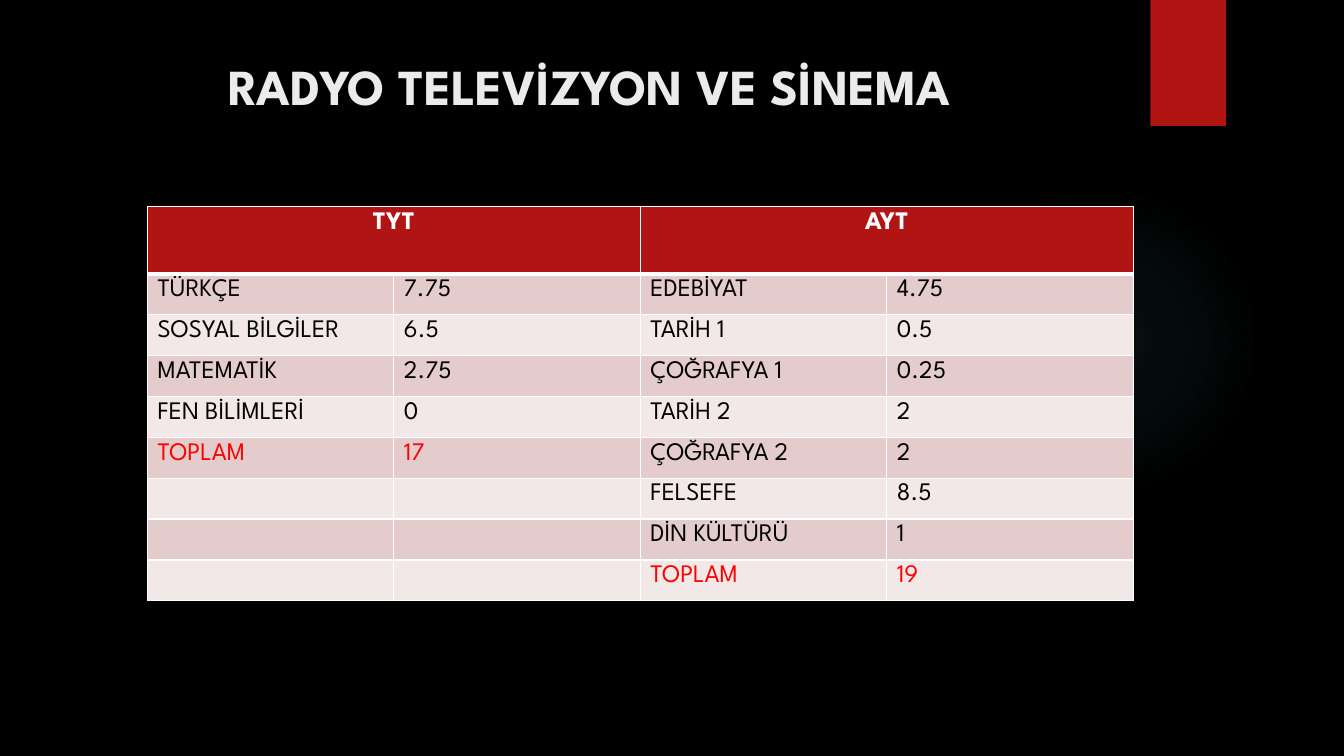
from lxml import etree
from pptx import Presentation
from pptx.dml.color import RGBColor
from pptx.enum import shapes, text
from pptx.oxml import ns, parse_xml
from pptx.util import Pt

FONT = "League Spartan"
COLORS = {
    "background": "000000", "accent": "B01513", "glow": "50B9C1",
    "title": "EBEBEB", "header": "FFFFFF", "border": "FFFFFF",
    "body": "000000", "total": "FF0000",
    "band_dark": "E4CCCC", "band_light": "F2E8E7",
}
TYT = [("TÜRKÇE", "7.75"), ("SOSYAL BİLGİLER", "6.5"), ("MATEMATİK", "2.75"),
       ("FEN BİLİMLERİ", "0"), ("TOPLAM", "17")]
AYT = [("EDEBİYAT", "4.75"), ("TARİH 1", "0.5"), ("ÇOĞRAFYA 1", "0.25"),
       ("TARİH 2", "2"), ("ÇOĞRAFYA 2", "2"), ("FELSEFE", "8.5"),
       ("DİN KÜLTÜRÜ", "1"), ("TOPLAM", "19")]


def color(name):
    return RGBColor.from_string(COLORS[name])


def write(frame, words, size, color_name, bold=False, align=text.PP_ALIGN.LEFT):
    paragraph = frame.paragraphs[0]
    paragraph.alignment = align
    run = paragraph.add_run()
    run.text = words
    run.font.name = FONT
    run.font.size = Pt(size)
    run.font.bold = bold
    run.font.color.rgb = color(color_name)


prs = Presentation()
prs.slide_width, prs.slide_height = Pt(960), Pt(540)
slide = prs.slides.add_slide(prs.slide_layouts[6])
slide.background.fill.solid()
slide.background.fill.fore_color.rgb = color("background")

# Soft glow behind the table
glow = slide.shapes.add_shape(
    shapes.MSO_SHAPE.OVAL, Pt(677.5), Pt(131.8), Pt(221.8), Pt(221.8))
glow.shadow.inherit = False
glow.line.fill.background()
stops = "".join(
    f'<a:gs pos="{position * 1000}"><a:srgbClr val="{COLORS["glow"]}">'
    f'<a:alpha val="{alpha * 1000}"/></a:srgbClr></a:gs>'
    for position, alpha in [(0, 7), (36, 6), (69, 0)])
gradient = parse_xml(
    f'<a:gradFill {ns.nsdecls("a")}><a:gsLst>{stops}</a:gsLst><a:path path="circle">'
    '<a:fillToRect l="50000" t="50000" r="50000" b="50000"/></a:path></a:gradFill>')
glow.element.spPr.find(ns.qn("a:prstGeom")).addnext(gradient)

ribbon = slide.shapes.add_shape(
    shapes.MSO_SHAPE.RECTANGLE, Pt(821.8), Pt(0), Pt(54), Pt(90))
ribbon.shadow.inherit = False
ribbon.fill.solid()
ribbon.fill.fore_color.rgb = color("accent")
ribbon.line.fill.background()

title = slide.shapes.add_textbox(Pt(51), Pt(36), Pt(741), Pt(110)).text_frame
title.word_wrap = True
title.vertical_anchor = text.MSO_ANCHOR.TOP
write(title, "RADYO TELEVİZYON VE SİNEMA", 36, "title", True, text.PP_ALIGN.CENTER)

# Scores: one header row over two pairs of columns
HEADER_HEIGHT, ROW_HEIGHT, COLUMN_WIDTH = 48, 29.2, 176.05
row_count = len(AYT) + 1
scores = slide.shapes.add_table(
    row_count, 4, Pt(105.3), Pt(147.6), Pt(4 * COLUMN_WIDTH),
    Pt(HEADER_HEIGHT + len(AYT) * ROW_HEIGHT)).table
for column in scores.columns:
    column.width = Pt(COLUMN_WIDTH)

for r, row in enumerate(scores.rows):
    row.height = Pt(ROW_HEIGHT if r else HEADER_HEIGHT)
    band = "accent" if r == 0 else "band_dark" if r % 2 else "band_light"
    for cell in row.cells:
        properties = cell._tc.get_or_add_tcPr()
        for side in ("lnL", "lnR", "lnT", "lnB"):
            thick = (r == 0 and side == "lnB") or (r == 1 and side == "lnT")
            border = etree.SubElement(
                properties, ns.qn(f"a:{side}"), w=str(Pt(3 if thick else 1)))
            fill = etree.SubElement(border, ns.qn("a:solidFill"))
            etree.SubElement(fill, ns.qn("a:srgbClr"), val=COLORS["border"])
        cell.fill.solid()
        cell.fill.fore_color.rgb = color(band)

for first_column, exam, subjects in [(0, "TYT", TYT), (2, "AYT", AYT)]:
    header = scores.cell(0, first_column)
    header.merge(scores.cell(0, first_column + 1))
    write(header.text_frame, exam, 18, "header", True, text.PP_ALIGN.CENTER)
    for r, (subject, score) in enumerate(subjects, start=1):
        ink = "total" if subject == "TOPLAM" else "body"
        for c, words in enumerate((subject, score), start=first_column):
            write(scores.cell(r, c).text_frame, words, 18, ink)

prs.save("out.pptx")
